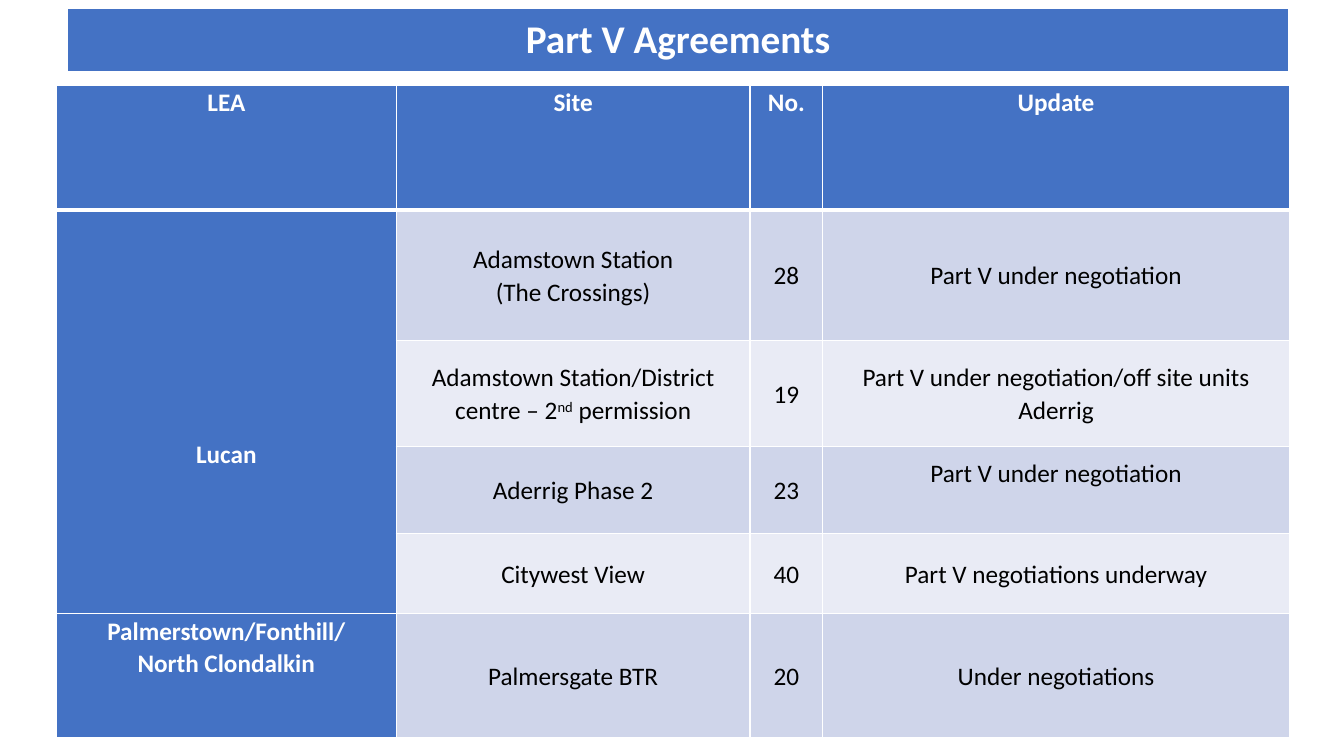
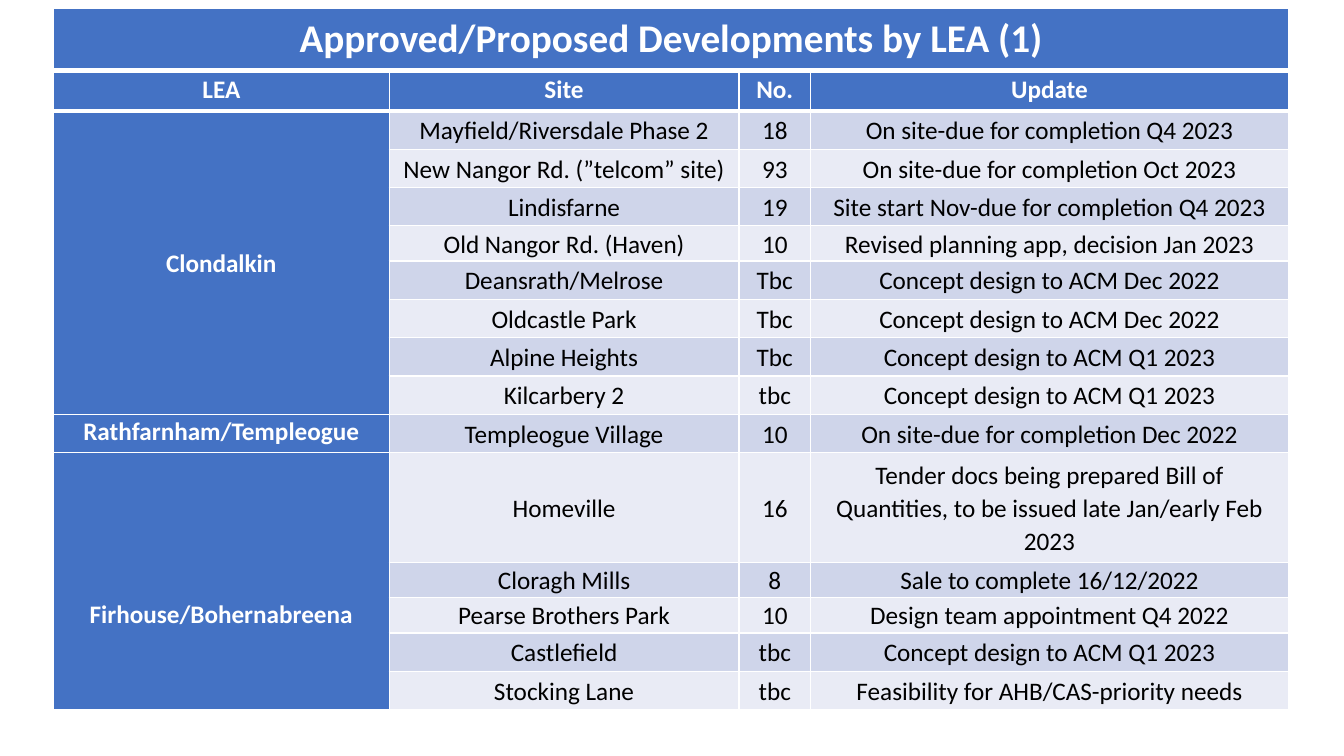
from lxml.etree import SubElement
from pptx import Presentation
from pptx.dml.color import RGBColor
from pptx.enum.text import MSO_ANCHOR as Anchor, PP_ALIGN as Align
from pptx.oxml.ns import qn
from pptx.util import Inches, Pt

COLORS = {
    "header": "4472C4",
    "band_dark": "CFD5EA",
    "band_light": "E9EBF5",
    "white": "FFFFFF",
    "black": "000000",
}
HEADINGS = ("LEA", "Site", "No.", "Update")


class Deck:
    font_name = "Calibri"
    title_size = 28
    body_size = 18
    thin, thick = 1, 3

    def __init__(self):
        self.presentation = Presentation()
        self.presentation.slide_width = Inches(13.33)
        self.presentation.slide_height = Inches(7.5)
        self.slide = None

    def new_slide(self):
        self.slide = self.presentation.slides.add_slide(self.presentation.slide_layouts[6])

    def add_grid(self, left, top, widths, heights):
        frame = self.slide.shapes.add_table(
            len(heights), len(widths), Inches(left), Inches(top),
            Inches(sum(widths)), Inches(sum(heights)))
        table = frame.table
        table.horz_banding = False
        for column, width in zip(table.columns, widths):
            column.width = Inches(width)
        for row, height in zip(table.rows, heights):
            row.height = Inches(height)
        return table

    def paint_cell(self, cell, fill, top=thin, bottom=thin):
        cell.fill.solid()
        cell.fill.fore_color.rgb = RGBColor.from_string(COLORS[fill])
        properties = cell._tc.get_or_add_tcPr()
        sides = (("L", self.thin), ("R", self.thin), ("T", top), ("B", bottom))
        for index, (side, width) in enumerate(sides):
            line = SubElement(properties, qn(f"a:ln{side}"), w=str(Pt(width)))
            color = SubElement(SubElement(line, qn("a:solidFill")), qn("a:srgbClr"))
            color.set("val", COLORS["white"])
            properties.insert(index, line)

    def fill_text(self, cell, text, color="white", bold=True, size=body_size,
                  anchor=Anchor.MIDDLE, spacing=1.07, margins=(0.07, 0, 0.07, 0)):
        (cell.margin_left, cell.margin_top,
         cell.margin_right, cell.margin_bottom) = map(Inches, margins)
        cell.vertical_anchor = anchor
        frame = cell.text_frame
        for index, line in enumerate(text.split("\n")):
            paragraph = frame.add_paragraph() if index else frame.paragraphs[0]
            paragraph.alignment = Align.CENTER
            paragraph.line_spacing = spacing
            font = paragraph.font
            font.name, font.size, font.bold = self.font_name, Pt(size), bold
            font.color.rgb = RGBColor.from_string(COLORS[color])
            for part, piece in enumerate(line.split("^")):
                run = paragraph.add_run()
                run.text = piece
                if part % 2:
                    run._r.get_or_add_rPr().set("baseline", "30000")

    def add_title(self, text, left, width, height):
        cell = self.add_grid(left, 0.08, [width], [height]).cell(0, 0)
        self.paint_cell(cell, "header", bottom=self.thick)
        self.fill_text(cell, text, size=self.title_size, spacing=1.0,
                       margins=(0.14, 0.07, 0.14, 0.07))

    def add_schedule(self, left, top, widths, heights, areas):
        table = self.add_grid(left, top, widths, heights)
        table.first_col = True
        for column, heading in enumerate(HEADINGS):
            cell = table.cell(0, column)
            self.paint_cell(cell, "header", bottom=self.thick)
            self.fill_text(cell, heading, anchor=Anchor.TOP)
        row = 1
        for area, anchor, drop, sites in areas:
            first = row
            for site, number, update, lift in sites:
                border = self.thick if row == 1 else self.thin
                self.paint_cell(table.cell(row, 0), "header", top=border)
                band = "band_dark" if row % 2 else "band_light"
                for column, text in enumerate((site, number, update), 1):
                    cell = table.cell(row, column)
                    self.paint_cell(cell, band, top=border)
                    bottom = lift if column == 3 else 0
                    self.fill_text(cell, text, "black", False, margins=(0.07, 0, 0.07, bottom))
                row += 1
            area_cell = table.cell(first, 0)
            if len(sites) > 1:
                area_cell.merge(table.cell(row - 1, 0))
            self.fill_text(area_cell, area, anchor=anchor, margins=(0.07, drop, 0.07, 0))


def main():
    deck = Deck()

    deck.new_slide()
    deck.add_schedule(
        0.56, 0.85, [3.37, 3.51, 0.72, 4.63], [1.23, 1.3, 1.05, 0.86, 0.8, 1.23],
        [
            ("Lucan", Anchor.MIDDLE, 0.84, [
                ("Adamstown Station\n(The Crossings)", "28", "Part V under negotiation", 0),
                ("Adamstown Station/District centre – 2^nd^ permission", "19",
                 "Part V under negotiation/off site units Aderrig", 0),
                ("Aderrig Phase 2", "23", "Part V under negotiation", 0.33),
                ("Citywest View", "40", "Part V negotiations underway", 0),
            ]),
            ("Palmerstown/Fonthill/\nNorth Clondalkin", Anchor.TOP, 0, [
                ("Palmersgate BTR", "20", "Under negotiations", 0),
            ]),
        ])
    deck.add_title("Part V Agreements", 0.67, 12.11, 0.64)

    deck.new_slide()
    deck.add_schedule(
        0.53, 0.72, [3.33, 3.47, 0.71, 4.74],
        [0.38] * 4 + [0.35] + [0.38] * 5 + [1.09] + [0.35] * 2 + [0.38] * 2,
        [
            ("Clondalkin", Anchor.MIDDLE, 0, [
                ("Mayfield/Riversdale Phase 2", "18", "On site-due for completion Q4 2023", 0),
                ("New Nangor Rd. (”telcom” site)", "93", "On site-due for completion Oct 2023", 0),
                ("Lindisfarne", "19", "Site start Nov-due for completion Q4 2023", 0),
                ("Old Nangor Rd. (Haven)", "10", "Revised planning app, decision Jan 2023", 0),
                ("Deansrath/Melrose", "Tbc", "Concept design to ACM Dec 2022", 0),
                ("Oldcastle Park", "Tbc", "Concept design to ACM Dec 2022", 0),
                ("Alpine Heights", "Tbc", "Concept design to ACM Q1 2023", 0),
                ("Kilcarbery 2", "tbc", "Concept design to ACM Q1 2023", 0),
            ]),
            ("Rathfarnham/Templeogue", Anchor.TOP, 0, [
                ("Templeogue Village", "10", "On site-due for completion Dec 2022", 0),
            ]),
            ("Firhouse/Bohernabreena", Anchor.MIDDLE, 0.65, [
                ("Homeville", "16", "Tender docs being prepared Bill of Quantities, "
                 "to be issued late Jan/early Feb 2023", 0),
                ("Cloragh Mills", "8", "Sale to complete 16/12/2022", 0),
                ("Pearse Brothers Park", "10", "Design team appointment Q4 2022", 0),
                ("Castlefield", "tbc", "Concept design to ACM Q1 2023", 0),
                ("Stocking Lane", "tbc", "Feasibility for AHB/CAS-priority needs", 0),
            ]),
        ])
    deck.add_title("Approved/Proposed Developments by LEA (1)", 0.53, 12.25, 0.61)

    deck.presentation.save("out.pptx")


if __name__ == "__main__":
    main()
